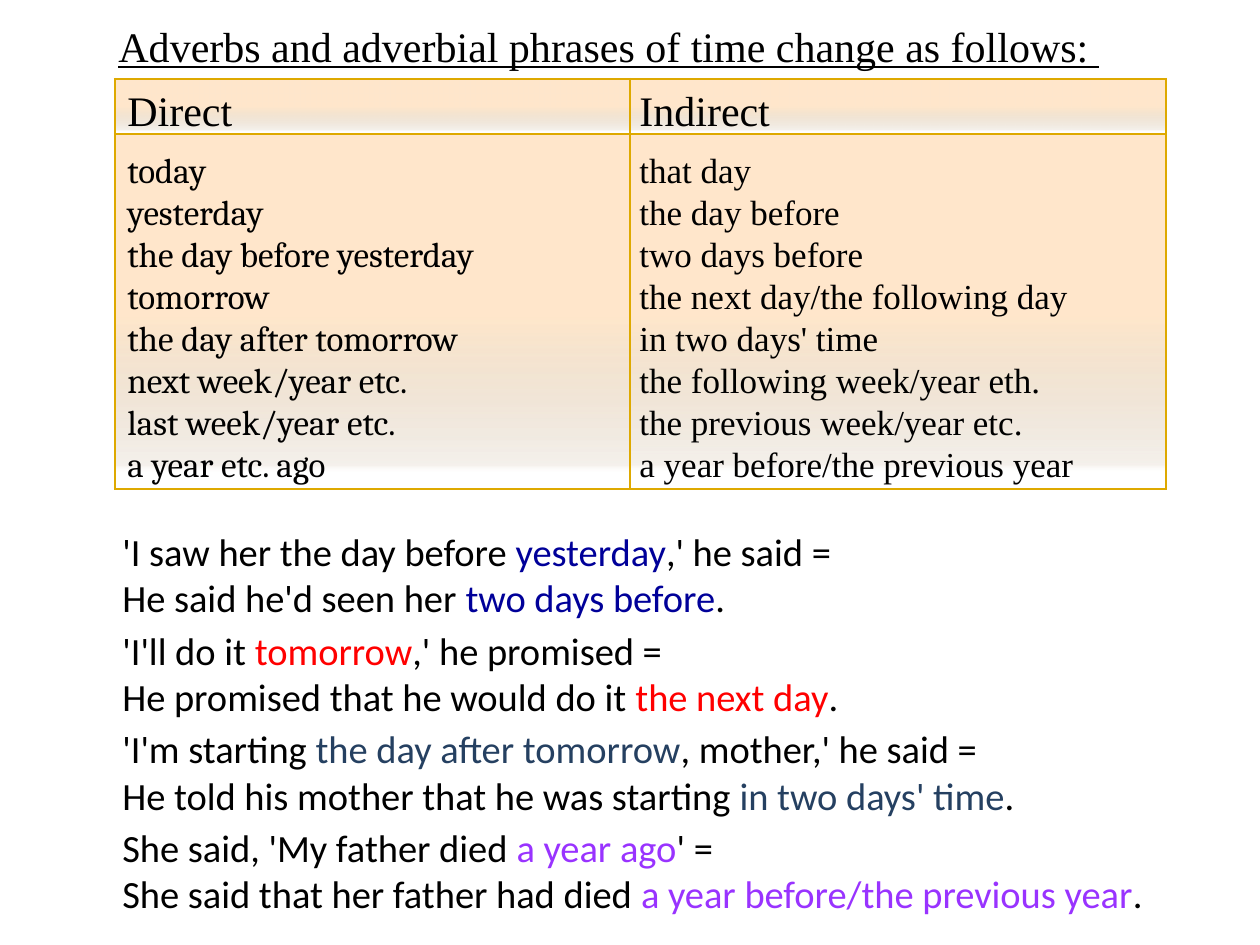
import pptx
import pptx.util
import pptx.dml.color
import pptx.enum.text
import lxml.etree

RGBColor = pptx.dml.color.RGBColor
Pt = pptx.util.Pt
BLACK = RGBColor(0x00, 0x00, 0x00)
NAVY = RGBColor(0x00, 0x00, 0x99)
RED = RGBColor(0xFF, 0x00, 0x00)
SLATE = RGBColor(0x25, 0x40, 0x61)
PURPLE = RGBColor(0x99, 0x33, 0xFF)
GOLD = RGBColor(0xDE, 0xA9, 0x00)
SERIF = "Times New Roman"
PX = 914400 / 126

# Content
TITLE = "Adverbs and adverbial phrases of time change as follows: "
HEADINGS = ("Direct", "Indirect")
DIRECT = [
    "today", "yesterday", "the day before yesterday", "tomorrow",
    "the day after tomorrow", "next week/year etc.", "last week/year etc.",
    "a year etc. ago",
]
INDIRECT = [
    "that day", "the day before", "two days before",
    "the next day/the following day", "in two days' time",
    "the following week/year eth.", "the previous week/year etc.",
    "a year before/the previous year",
]
# Each example: highlight colour, then two lines of (before, highlight, after)
EXAMPLES = [
    (NAVY, ("'I saw her the day before ", "yesterday", ",' he said ="),
     ("He said he'd seen her ", "two days before", ".")),
    (RED, ("'I'll do it ", "tomorrow", ",' he promised ="),
     ("He promised that he would do it ", "the next day", ".")),
    (SLATE, ("'I'm starting ", "the day after tomorrow", ", mother,' he said ="),
     ("He told his mother that he was starting ", "in two days' time", ".")),
    (PURPLE, ("She said, 'My father died ", "a year ago", "' ="),
     ("She said that her father had died ", "a year before/the previous year", ".")),
]

# Layout in px
TABLE_LEFT, TABLE_TOP = 115, 79
COLUMN_WIDTHS, ROW_HEIGHTS = (515, 536), (55, 355)
TEXT_LEFTS = (115, 627)
HEADING_TOP, LIST_TOP = 78, 142
# Gradient stops: position %, colour, opacity %
GRADIENT = [(5, "FFE9CC", 0), (7, "784700", 7), (49, "FFB661", 32)]


def px(value):
    return round(value * PX)


def add_text(slide, box, lines, font, size, wrap=True, gap_every=0):
    """Add a text box; each line is a list of (text, colour) runs."""
    shape = slide.shapes.add_textbox(*map(px, box))
    frame = shape.text_frame
    frame.word_wrap = wrap
    frame.auto_size = pptx.enum.text.MSO_AUTO_SIZE.SHAPE_TO_FIT_TEXT
    for index, line in enumerate(lines):
        paragraph = frame.add_paragraph() if index else frame.paragraphs[0]
        paragraph.line_spacing = Pt(size * 1.2)
        if gap_every and index and index % gap_every == 0:
            paragraph.space_before = Pt(3.6)
        for text, colour in line:
            run = paragraph.add_run()
            run.text = text
            run.font.name = font
            run.font.size = Pt(size)
            run.font.color.rgb = colour
    return shape


def add_child(parent, tag, **attributes):
    child = lxml.etree.SubElement(parent, pptx.oxml.ns.qn(tag))
    for name, value in attributes.items():
        child.set(name, str(value))
    return child


def style_cell(cell):
    """Give a cell gold borders and a fading gradient."""
    properties = cell._tc.get_or_add_tcPr()
    for side in ("a:lnL", "a:lnR", "a:lnT", "a:lnB"):
        line = add_child(properties, side, w=Pt(1.5))
        add_child(add_child(line, "a:solidFill"), "a:srgbClr", val=GOLD)
    gradient = add_child(properties, "a:gradFill", rotWithShape=1)
    stops = add_child(gradient, "a:gsLst")
    for position, colour, opacity in GRADIENT:
        stop = add_child(stops, "a:gs", pos=position * 1000)
        add_child(add_child(stop, "a:srgbClr", val=colour),
                  "a:alpha", val=opacity * 1000)
    add_child(gradient, "a:lin", ang=270 * 60000, scaled=0)


def main():
    presentation = pptx.Presentation()
    presentation.slide_width = pptx.util.Inches(10)
    presentation.slide_height = pptx.util.Inches(7.5)
    slide = presentation.slides.add_slide(presentation.slide_layouts[6])

    # Title
    title = add_text(slide, (106, 14, 1101, 64), [[(TITLE, BLACK)]], SERIF, 24)
    title.text_frame.paragraphs[0].runs[0].font.underline = True

    # Table grid
    table = slide.shapes.add_table(
        len(ROW_HEIGHTS), len(COLUMN_WIDTHS), px(TABLE_LEFT), px(TABLE_TOP),
        px(sum(COLUMN_WIDTHS)), px(sum(ROW_HEIGHTS))).table
    table.first_row = table.horz_banding = False
    for column, width in zip(table.columns, COLUMN_WIDTHS):
        column.width = px(width)
    for row, height in zip(table.rows, ROW_HEIGHTS):
        row.height = px(height)
    for cell in table.iter_cells():
        style_cell(cell)

    # Column headings and word lists
    for left, heading, width in zip(TEXT_LEFTS, HEADINGS, (141, 158)):
        add_text(slide, (left, HEADING_TOP, width, 64), [[(heading, BLACK)]],
                 SERIF, 24, wrap=False)
    for left, words, width, font in (
            (TEXT_LEFTS[1], INDIRECT, 537, SERIF),
            (TEXT_LEFTS[0], DIRECT, 568, "Cambria")):
        add_text(slide, (left, LIST_TOP, width, 352),
                 [[(word, BLACK)] for word in words], font, 20)

    # Example sentences in pairs
    lines = [list(zip(parts, (BLACK, colour, BLACK)))
             for colour, *pair in EXAMPLES for parts in pair]
    add_text(slide, (110, 522, 1076, 404), lines, "Calibri", 22, gap_every=2)

    presentation.save("out.pptx")


if __name__ == "__main__":
    main()
